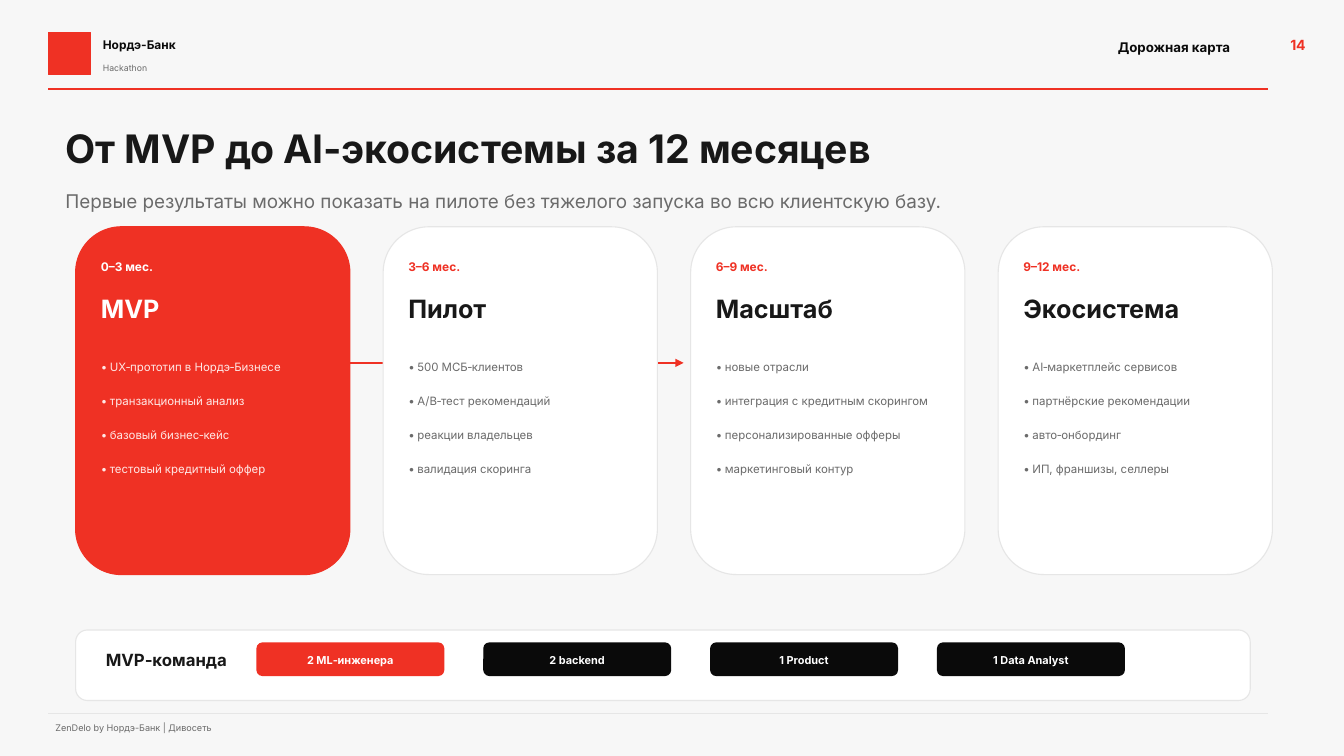
import dataclasses

import pptx
import pptx.dml.color
import pptx.enum.shapes
import pptx.enum.text
import pptx.oxml
import pptx.oxml.ns
import pptx.util

COLUMNS, ROWS = 133.3, 75
CELL = pptx.util.Inches(0.1)
FONT = "Inter"
COLORS = {
    "page": "F7F7F7",
    "red": "EF3124",
    "black": "0A0A0A",
    "ink": "181818",
    "gray": "6B6B6B",
    "rule": "E6E6E6",
    "white": "FFFFFF",
    "blush": "FFE7E5",
}
ALIGN = pptx.enum.text.PP_ALIGN
SHAPES = pptx.enum.shapes.MSO_SHAPE

STAGES = [
    ("0–3 мес.", "MVP", [
        "UX‑прототип в Нордэ‑Бизнесе", "транзакционный анализ",
        "базовый бизнес‑кейс", "тестовый кредитный оффер"]),
    ("3–6 мес.", "Пилот", [
        "500 МСБ‑клиентов", "A/B‑тест рекомендаций",
        "реакции владельцев", "валидация скоринга"]),
    ("6–9 мес.", "Масштаб", [
        "новые отрасли", "интеграция с кредитным скорингом",
        "персонализированные офферы", "маркетинговый контур"]),
    ("9–12 мес.", "Экосистема", [
        "AI‑маркетплейс сервисов", "партнёрские рекомендации",
        "авто‑онбординг", "ИП, франшизы, селлеры"]),
]
TEAM = ["2 ML‑инженера", "2 backend", "1 Product", "1 Data Analyst"]


@dataclasses.dataclass
class Box:
    left: float
    top: float
    width: float
    height: float

    def inner(self, left, top, width, height):
        return Box(self.left + left, self.top + top, width, height)

    def lengths(self):
        return [round(n * CELL) for n in (self.left, self.top, self.width, self.height)]


def rgb(color):
    return pptx.dml.color.RGBColor.from_string(COLORS[color])


def add_bullet(paragraph):
    properties = paragraph._p.get_or_add_pPr()
    indent = round(0.9 * CELL)
    properties.set("marL", str(indent))
    properties.set("indent", str(-indent))
    for tag, attribute, value in (("buFont", "typeface", FONT), ("buChar", "char", "•")):
        element = pptx.oxml.parse_xml(
            f'<a:{tag} {pptx.oxml.ns.nsdecls("a")} {attribute}="{value}"/>')
        properties.append(element)


def style_text(frame, lines, size, color, bold=False, align=ALIGN.LEFT, bullets=False, gap=0):
    frame.margin_left = frame.margin_right = frame.margin_top = frame.margin_bottom = 0
    frame.vertical_anchor = pptx.enum.text.MSO_ANCHOR.MIDDLE
    frame.word_wrap = True
    for index, line in enumerate(lines):
        paragraph = frame.add_paragraph() if index else frame.paragraphs[0]
        if index and gap:
            paragraph.space_before = pptx.util.Pt(gap)
        if bullets:
            add_bullet(paragraph)
        paragraph.alignment = align
        run = paragraph.add_run()
        run.text = line
        run.font.name = FONT
        run.font.size = pptx.util.Pt(size)
        run.font.bold = bold
        run.font.color.rgb = rgb(color)


def add_text(slide, box, text, **formatting):
    lines = [text] if isinstance(text, str) else text
    frame = slide.shapes.add_textbox(*box.lengths()).text_frame
    style_text(frame, lines, **formatting)


def add_panel(slide, box, fill, line, weight, preset=SHAPES.ROUNDED_RECTANGLE):
    panel = slide.shapes.add_shape(preset, *box.lengths())
    panel.shadow.inherit = False
    panel.fill.solid()
    panel.fill.fore_color.rgb = rgb(fill)
    panel.line.color.rgb = rgb(line)
    panel.line.width = pptx.util.Pt(weight)
    return panel


def add_rule(slide, left, top, width, color, weight, arrow=False):
    x, y, length, _ = Box(left, top, width, 0).lengths()
    rule = slide.shapes.add_connector(
        pptx.enum.shapes.MSO_CONNECTOR.STRAIGHT, x, y, x + length, y)
    rule.line.color.rgb = rgb(color)
    rule.line.width = pptx.util.Pt(weight)
    namespace = pptx.oxml.ns.nsdecls("a")
    if arrow:
        rule.line._get_or_add_ln().append(
            pptx.oxml.parse_xml(f'<a:tailEnd {namespace} type="triangle"/>'))
    rule._element.spPr.append(pptx.oxml.parse_xml(f"<a:effectLst {namespace}/>"))


def draw_header(slide, box):
    add_panel(slide, box.inner(0, 0.2, 4.2, 4.2), "red", "red", 1, SHAPES.RECTANGLE)
    add_text(slide, box.inner(5.4, 0.5, 14.5, 1.8), "Нордэ-Банк", size=8.5, color="black", bold=True)
    add_text(slide, box.inner(5.4, 3, 11, 1.5), "Hackathon", size=6.2, color="gray")
    add_rule(slide, box.left, box.top + box.height, box.width, "red", 1.2)
    add_text(slide, box.inner(box.width - 1.3, 0, 5, 3), "14",
             size=10, color="red", bold=True, align=ALIGN.RIGHT)
    add_text(slide, box.inner(22.7, 0.2, 94.5, 3), "Дорожная карта",
             size=9.5, color="black", bold=True, align=ALIGN.RIGHT)


def draw_heading(slide, box):
    add_text(slide, box.inner(0, 0, box.width, 7), "От MVP до AI‑экосистемы за 12 месяцев",
             size=28, color="ink", bold=True)
    add_text(slide, box.inner(0, 7.2, box.width, 3),
             "Первые результаты можно показать на пилоте без тяжелого запуска во всю клиентскую базу.",
             size=13.5, color="gray")


def draw_stage(slide, box, stage, active):
    period, name, tasks = stage
    add_panel(slide, box, "red" if active else "white", "red" if active else "rule", 0.8)
    add_text(slide, box.inner(2.5, 3, 21, 2), period,
             size=8.5, color="white" if active else "red", bold=True)
    add_text(slide, box.inner(2.5, 6.3, 21, 3.5), name,
             size=18, color="white" if active else "ink", bold=True)
    add_text(slide, box.inner(2.5, 13, 23, 12), tasks,
             size=8.2, color="blush" if active else "gray", bullets=True, gap=14.5)


def draw_roadmap(slide, box):
    card_width, pitch = 27.2, 30.5
    for arrow in range(2):
        add_rule(slide, box.left + 26.7 + arrow * 28, box.top + 13.5, 5.6, "red", 1.1, arrow=True)
    for index, stage in enumerate(STAGES):
        draw_stage(slide, box.inner(index * pitch, 0, card_width, box.height), stage, index == 0)


def draw_team(slide, box):
    add_panel(slide, box, "white", "rule", 0.8)
    add_text(slide, box.inner(3, 2, 14, 2), "MVP‑команда", size=12, color="ink", bold=True)
    for index, role in enumerate(TEAM):
        color = "black" if index else "red"
        pill = add_panel(slide, box.inner(18 + index * 22.5, 1.3, 18.5, 3.2), color, color, 1)
        style_text(pill.text_frame, [role], size=7.8, color="white", bold=True, align=ALIGN.CENTER)
        pill.text_frame.margin_top = round(0.2 * CELL)


def draw_footer(slide, box):
    add_rule(slide, box.left, box.top, box.width, "rule", 0.8)
    add_text(slide, box.inner(0.7, 0.5, 55, 1.8), "ZenDelo by Нордэ-Банк | Дивосеть",
             size=6.5, color="gray")


def main():
    deck = pptx.Presentation()
    deck.slide_width = round(COLUMNS * CELL)
    deck.slide_height = ROWS * CELL
    slide = deck.slides.add_slide(deck.slide_layouts[6])
    slide.background.fill.solid()
    slide.background.fill.fore_color.rgb = rgb("page")
    draw_header(slide, Box(4.8, 3, 121, 5.8))
    draw_heading(slide, Box(6.5, 11.2, 118, 10.2))
    draw_roadmap(slide, Box(7.5, 22.5, 118.7, 34.5))
    draw_team(slide, Box(7.5, 62.5, 116.5, 7))
    draw_footer(slide, Box(4.8, 70.8, 121, 2.3))
    deck.save("out.pptx")


if __name__ == "__main__":
    main()
